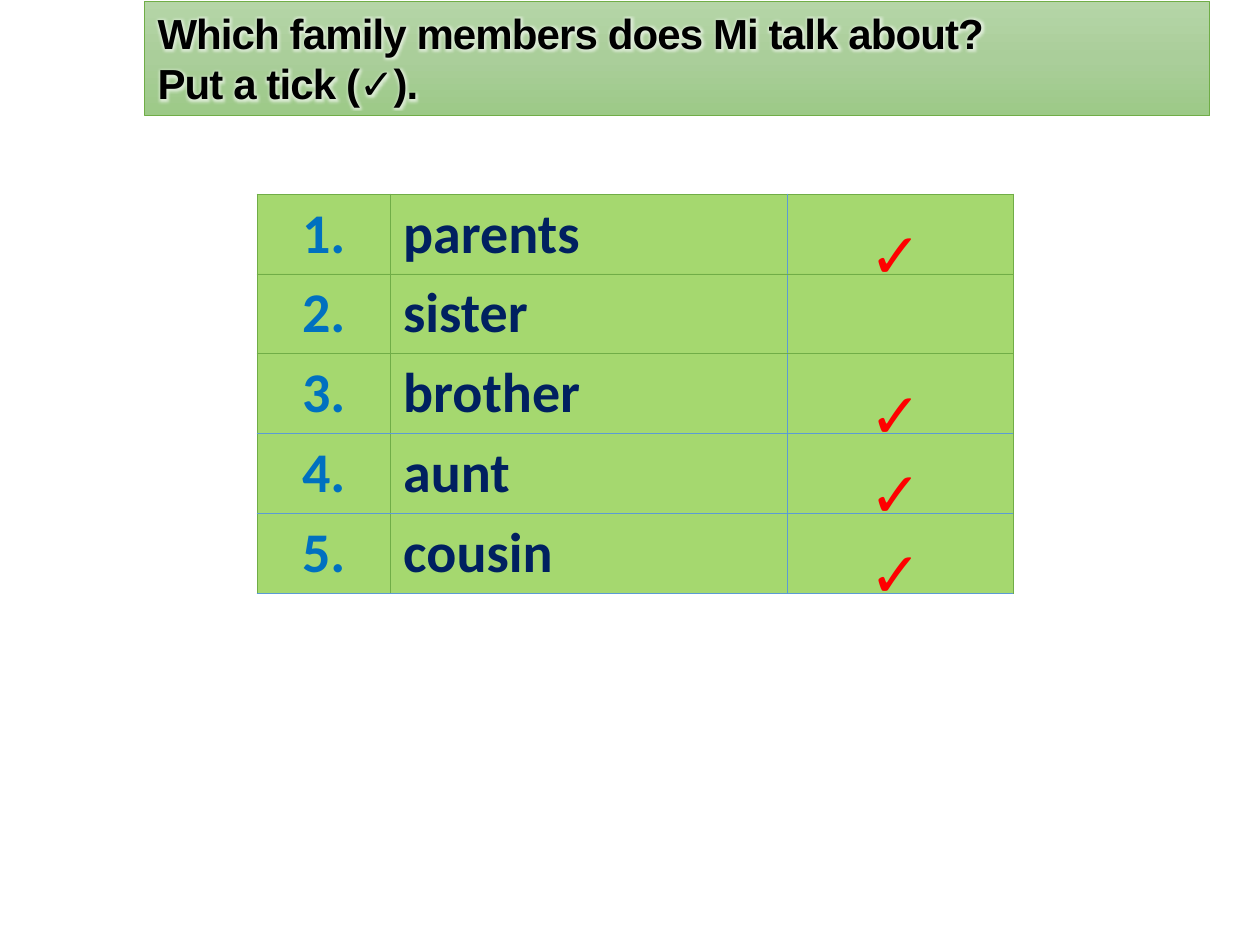
from pptx import Presentation
from pptx.util import Inches, Pt
from pptx.dml.color import RGBColor
from pptx.enum.text import PP_ALIGN, MSO_ANCHOR, MSO_AUTO_SIZE
from pptx.oxml import parse_xml
from pptx.oxml.ns import nsdecls, qn

HUES = {
    "top": "B5D5A7", "mid": "AACE9A", "low": "9CC987", "edge": "70AD47",
    "rule": "5B9BD5", "cell": "92D050", "num": "0070C0", "word": "002060",
    "tick": "FF0000", "text": "000000", "glow": "FFFFFF",
}
ROWS = [("parents", True), ("sister", False), ("brother", True),
        ("aunt", True), ("cousin", True)]
COLS = [1.06, 3.15, 1.79]


def hue(name):
    return RGBColor.from_string(HUES[name])


def style(para, font, size, name):
    para.font.name, para.font.size, para.font.bold = font, Pt(size), True
    para.font.color.rgb = hue(name)


def place(shape, box):
    shape.left, shape.top, shape.width, shape.height = map(Inches, box)


def grade(shape):
    stops = "".join(
        f'<a:gs pos="{pos}"><a:srgbClr val="{HUES[name]}"/></a:gs>'
        for pos, name in ((0, "top"), (50000, "mid"), (100000, "low")))
    shape.fill.gradient()
    fill = shape._element.spPr.find(qn("a:gradFill"))
    fill.getparent().replace(fill, parse_xml(
        f'<a:gradFill {nsdecls("a")} rotWithShape="1"><a:gsLst>{stops}</a:gsLst>'
        '<a:lin ang="5400000" scaled="0"/></a:gradFill>'))


def add_head(slide, box):
    head = slide.shapes.title
    place(head, box)
    grade(head)
    head.line.color.rgb, head.line.width = hue("edge"), Pt(0.5)
    frame = head.text_frame
    frame.word_wrap, frame.vertical_anchor = True, MSO_ANCHOR.TOP
    frame.auto_size = MSO_AUTO_SIZE.SHAPE_TO_FIT_TEXT
    frame.text = "Which family members does Mi talk about?\nPut a tick (✓)."
    for para in frame.paragraphs:
        para.alignment = PP_ALIGN.LEFT
        para.space_before = Pt(0)
        style(para, "Arial", 24, "text")
        for run in para.runs:
            props = run._r.get_or_add_rPr()
            props.set("spc", "-50")
            props.append(parse_xml(
                f'<a:effectLst {nsdecls("a")}><a:glow rad="38100">'
                f'<a:srgbClr val="{HUES["glow"]}"><a:alpha val="60000"/></a:srgbClr>'
                '</a:glow></a:effectLst>'))


def paint(cell, row, col):
    cell.fill.solid()
    cell.fill.fore_color.rgb = hue("cell")
    props = cell._tc.get_or_add_tcPr()
    shade = props.find(qn("a:solidFill"))[0]
    shade.append(parse_xml(f'<a:alpha {nsdecls("a")} val="82000"/>'))
    sides = {"L": col == 2, "R": col == 1, "T": row > 2, "B": row > 1}
    for spot, (side, blue) in enumerate(sides.items()):
        name = "rule" if blue else "edge"
        wide = Pt(1 if blue and side in "TB" else 0.5)
        props.insert(spot, parse_xml(
            f'<a:ln{side} {nsdecls("a")} w="{wide}"><a:solidFill>'
            f'<a:srgbClr val="{HUES[name]}"/></a:solidFill></a:ln{side}>'))


def add_grid(slide, box):
    table = slide.shapes.add_table(len(ROWS), len(COLS), *map(Inches, box)).table
    table.first_row = table.horz_banding = False
    for col, wide in zip(table.columns, COLS):
        col.width = Inches(wide)
    for row, (word, _) in enumerate(ROWS):
        table.rows[row].height = Inches(box[3] / len(ROWS))
        for col, text in enumerate((f"{row + 1}.", word, "")):
            cell = table.cell(row, col)
            cell.margin_top = cell.margin_bottom = Inches(0.04)
            cell.vertical_anchor = MSO_ANCHOR.MIDDLE
            paint(cell, row, col)
            if text:
                cell.text = text
                para = cell.text_frame.paragraphs[0]
                para.alignment = PP_ALIGN.LEFT if col else PP_ALIGN.CENTER
                style(para, "Calibri", 32, "word" if col else "num")


def add_ticks(slide, box):
    left, top, wide, high = box
    step = high / len(ROWS)
    mid = left + wide - COLS[-1] / 2
    for row, (_, seen) in enumerate(ROWS):
        if seen:
            spot = (mid - 0.34, top + row * step + 0.12, 0.59, 0.71)
            frame = slide.shapes.add_textbox(*map(Inches, spot)).text_frame
            frame.word_wrap = False
            frame.auto_size = MSO_AUTO_SIZE.SHAPE_TO_FIT_TEXT
            frame.text = "✓"
            style(frame.paragraphs[0], "Calibri", 36, "tick")


def main():
    deck = Presentation()
    deck.slide_width, deck.slide_height = Inches(10), Inches(7.5)
    slide = deck.slides.add_slide(deck.slide_layouts[5])
    add_head(slide, (1.15, 0.01, 8.45, 0.91))
    grid = (2.04, 1.54, sum(COLS), 3.17)
    add_grid(slide, grid)
    add_ticks(slide, grid)
    deck.save("out.pptx")


if __name__ == "__main__":
    main()
